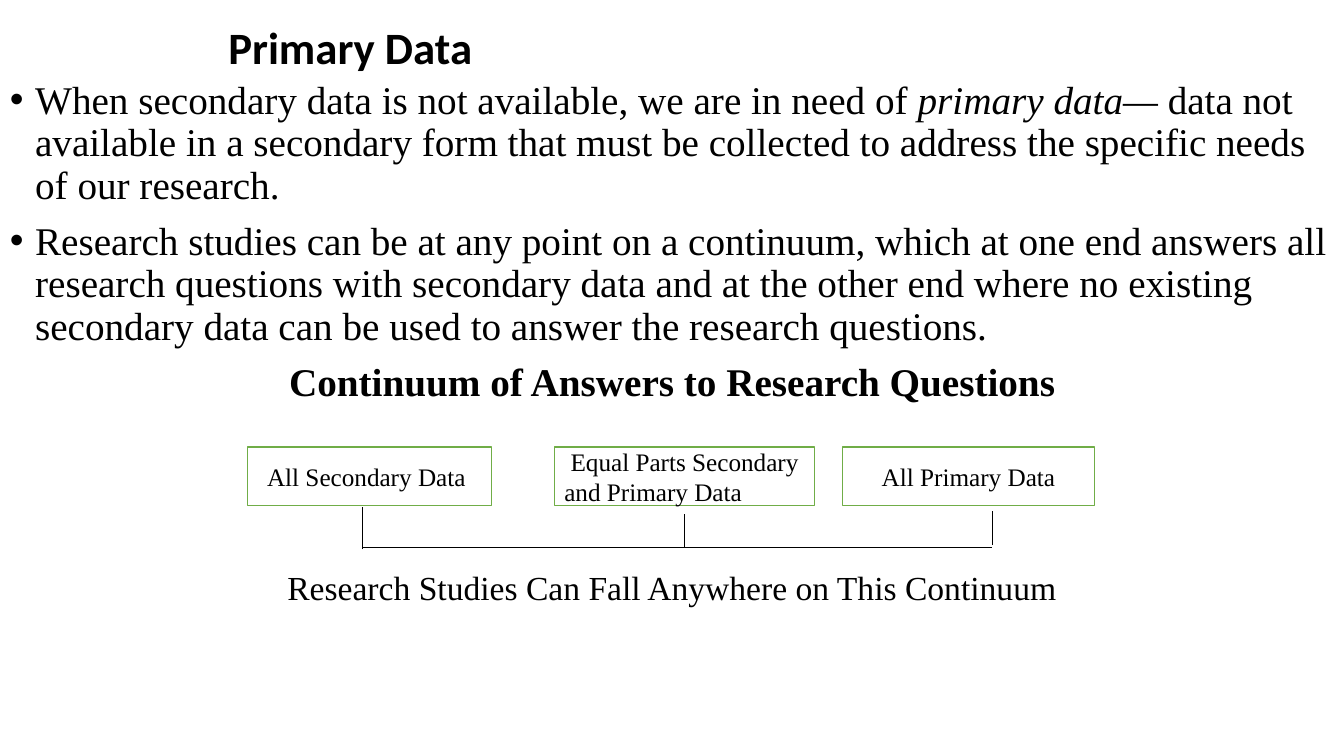
from lxml import etree
from pptx import Presentation
from pptx.dml.color import RGBColor
from pptx.enum.shapes import MSO_CONNECTOR, MSO_SHAPE
from pptx.enum.text import MSO_ANCHOR, PP_ALIGN
from pptx.oxml.ns import qn
from pptx.util import Inches, Pt

CENTER, LEFT = PP_ALIGN.CENTER, PP_ALIGN.LEFT
MIDDLE, TOP = MSO_ANCHOR.MIDDLE, MSO_ANCHOR.TOP
RECTANGLE, STRAIGHT = MSO_SHAPE.RECTANGLE, MSO_CONNECTOR.STRAIGHT
COLORS = {"text": "000000", "line": "000000", "box": "FFFFFF", "border": "70AD47"}
SERIF = "Times New Roman"
COLUMNS, ROWS = 160, 90
CELL = Inches(1 / 12)

TITLE_BOX = (26, 2, 108, 8)
BODY_BOX = (0, 9, 160, 78)
CONTINUUM_BOX = (29.5, 53.2, 100.8, 12)
BOX_HEIGHT = 7
CONTINUUM = [
    {"text": "All Secondary Data ", "left": 0, "width": 29, "align": CENTER,
     "stem": 13.6, "top": 7.2, "bottom": 12.2},
    {"text": " Equal Parts Secondary and Primary Data", "left": 36.5, "width": 31,
     "align": LEFT, "stem": 52, "top": 8, "bottom": 12},
    {"text": "All Primary Data", "left": 70.8, "width": 30, "align": CENTER,
     "stem": 88.6, "top": 7.6, "bottom": 11.7},
]
BODY = [
    {"bullet": True, "runs": [
        ("When secondary data is not available, we are in need of ", {}),
        ("primary data— ", {"italic": True}),
        ("data not available in a secondary form that must be collected to address "
         "the specific needs of our research.", {})]},
    {"bullet": True, "runs": [
        ("Research studies can be at any point on a continuum, which at one end "
         "answers all research questions with secondary data and at the other end "
         "where no existing secondary data can be used to answer the research "
         "questions.", {})]},
    {"align": CENTER, "runs": [
        ("Continuum of Answers to Research Questions", {"bold": True})]},
    {"align": CENTER, "before": 119, "runs": [
        ("Research Studies Can Fall Anywhere on This Continuum", {"size": Pt(24)})]},
]


def color(name):
    """Return the named colour."""
    return RGBColor.from_string(COLORS[name])


def cells(*values):
    """Convert grid cells to slide lengths."""
    return [round(value * CELL) for value in values]


def add_run(paragraph, text, **font_values):
    """Add a run with the given font values."""
    run = paragraph.add_run()
    run.text = text
    for name, value in {"name": SERIF, **font_values}.items():
        setattr(run.font, name, value)
    run.font.color.rgb = color("text")


def format_paragraph(paragraph, **values):
    """Set paragraph attributes from keyword values."""
    for name, value in values.items():
        setattr(paragraph, name, value)


def add_text_frame(slide, box, anchor):
    """Add a wrapping text box and return its frame."""
    frame = slide.shapes.add_textbox(*cells(*box)).text_frame
    frame.word_wrap = True
    frame.vertical_anchor = anchor
    return frame


def set_bullet(paragraph, bullet):
    """Give the paragraph a hanging indent and an optional bullet."""
    properties = paragraph._p.get_or_add_pPr()
    properties.set("marL", str(Inches(0.25)))
    properties.set("indent", str(-Inches(0.25)))
    if bullet:
        etree.SubElement(properties, qn("a:buFont"), typeface="Arial")
        etree.SubElement(properties, qn("a:buChar"), char="•")
    else:
        etree.SubElement(properties, qn("a:buNone"))


def add_title(slide, box):
    """Add the slide title."""
    paragraph = add_text_frame(slide, box, MIDDLE).paragraphs[0]
    format_paragraph(paragraph, line_spacing=0.9)
    add_run(paragraph, "Primary Data", name="Calibri", size=Pt(32), bold=True)


def add_body(slide, box):
    """Add the bullets, the diagram heading and its caption."""
    frame = add_text_frame(slide, box, TOP)
    for index, entry in enumerate(BODY):
        paragraph = frame.add_paragraph() if index else frame.paragraphs[0]
        format_paragraph(paragraph, line_spacing=0.9,
                         space_before=Pt(entry.get("before", 10)),
                         alignment=entry.get("align", LEFT))
        set_bullet(paragraph, entry.get("bullet", False))
        for text, values in entry["runs"]:
            add_run(paragraph, text, **{"size": Pt(28), **values})


def add_line(slide, *ends):
    """Add a thin straight line between two grid points."""
    line = slide.shapes.add_connector(STRAIGHT, *cells(*ends))
    line.line.color.rgb = color("line")
    line.line.width = Pt(0.5)
    etree.SubElement(line._element.spPr, qn("a:effectLst"))


def add_data_box(slide, box, text, alignment):
    """Add one labelled box of the continuum."""
    shape = slide.shapes.add_shape(RECTANGLE, *cells(*box))
    shape.shadow.inherit = False
    shape.fill.solid()
    shape.fill.fore_color.rgb = color("box")
    shape.line.color.rgb = color("border")
    shape.line.width = Pt(1)
    shape.text_frame.word_wrap = True
    shape.text_frame.vertical_anchor = MIDDLE
    paragraph = shape.text_frame.paragraphs[0]
    format_paragraph(paragraph, alignment=alignment)
    add_run(paragraph, text, size=Pt(18))


def add_continuum(slide, box):
    """Add the boxes and the bracket that joins them."""
    left, top, width, height = box
    for part in CONTINUUM:
        add_data_box(slide, (left + part["left"], top, part["width"], BOX_HEIGHT),
                     part["text"], part["align"])
    stems = [left + part["stem"] for part in CONTINUUM]
    add_line(slide, stems[0], top + height, stems[-1], top + height)
    for stem, part in zip(stems, CONTINUUM):
        add_line(slide, stem, top + part["bottom"], stem, top + part["top"])


def main():
    """Build and save the slide."""
    presentation = Presentation()
    presentation.slide_width, presentation.slide_height = cells(COLUMNS, ROWS)
    slide = presentation.slides.add_slide(presentation.slide_layouts[6])
    add_title(slide, TITLE_BOX)
    add_body(slide, BODY_BOX)
    add_continuum(slide, CONTINUUM_BOX)
    presentation.save("out.pptx")


if __name__ == "__main__":
    main()
